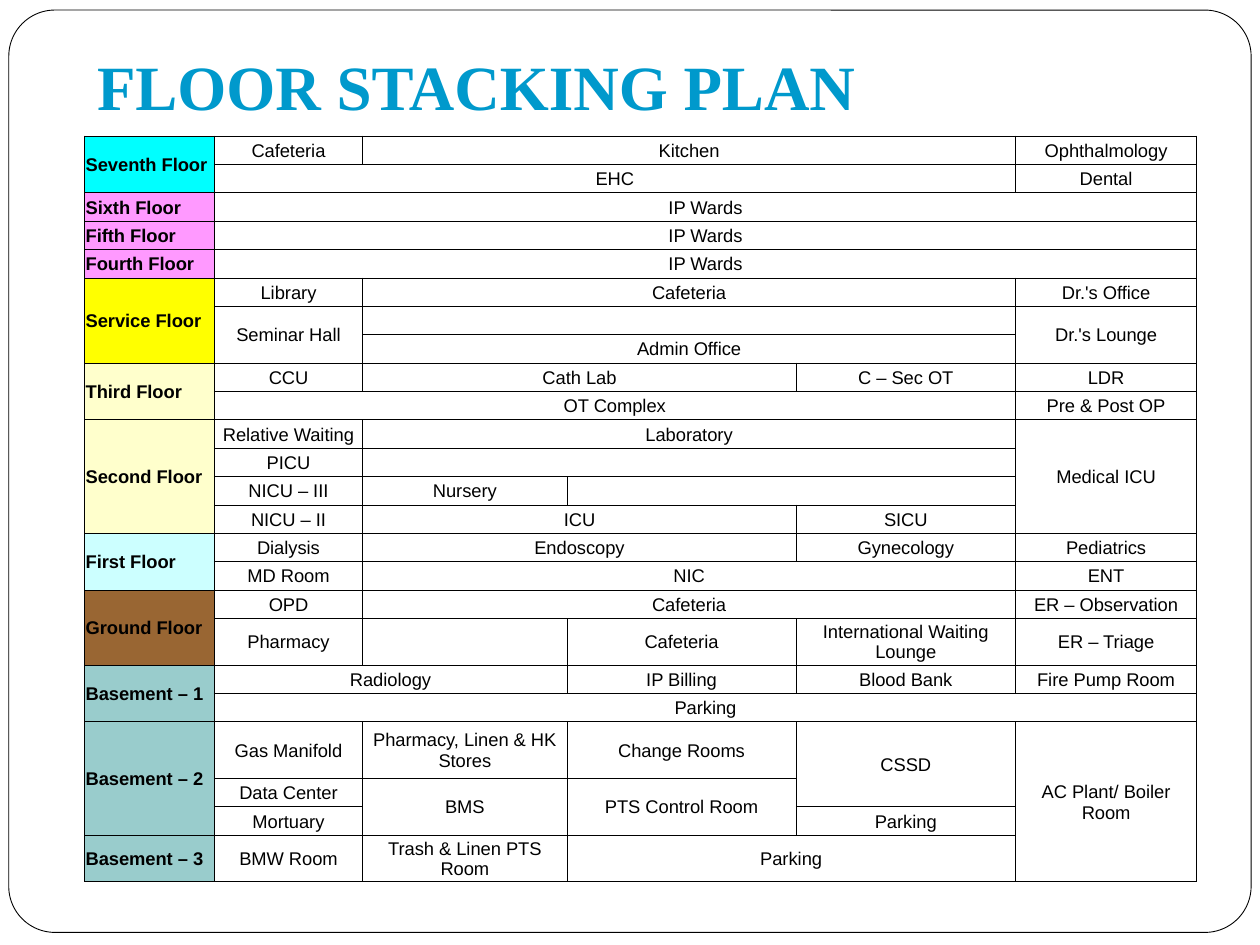
import dataclasses

import lxml.etree
import pptx
import pptx.dml.color
import pptx.enum.shapes
import pptx.enum.text
import pptx.oxml.ns
import pptx.util

Inches = pptx.util.Inches
Pt = pptx.util.Pt
RGB = pptx.dml.color.RGBColor.from_string
qn = pptx.oxml.ns.qn
Align = pptx.enum.text.PP_ALIGN
Anchor = pptx.enum.text.MSO_ANCHOR


@dataclasses.dataclass(frozen=True)
class Theme:
    paper: str = "FFFFFF"
    ink: str = "000000"
    title: str = "0099CC"
    title_font: str = "Times New Roman"
    table_font: str = "Arial"
    title_size: float = 36
    table_size: float = 10.5
    line_width: float = 0.5


theme = Theme()

floor_colors = {
    "Seventh Floor": "00FFFF",
    "Sixth Floor": "FF99FF",
    "Fifth Floor": "FF99FF",
    "Fourth Floor": "FF99FF",
    "Service Floor": "FFFF00",
    "Third Floor": "FFFFCC",
    "Second Floor": "FFFFCC",
    "First Floor": "CCFFFF",
    "Ground Floor": "996633",
    "Basement – 1": "99CCCC",
    "Basement – 2": "99CCCC",
    "Basement – 3": "99CCCC",
}

# "<" joins a cell to the one on its left, "^" to the one above.
plan = [
    ["Seventh Floor", "Cafeteria", "Kitchen", "<", "<", "Ophthalmology"],
    ["^", "EHC", "<", "<", "<", "Dental"],
    ["Sixth Floor", "IP Wards", "<", "<", "<", "<"],
    ["Fifth Floor", "IP Wards", "<", "<", "<", "<"],
    ["Fourth Floor", "IP Wards", "<", "<", "<", "<"],
    ["Service Floor", "Library", "Cafeteria", "<", "<", "Dr.'s Office"],
    ["^", "Seminar Hall", "", "<", "<", "Dr.'s Lounge"],
    ["^", "^", "Admin Office", "<", "<", "^"],
    ["Third Floor", "CCU", "Cath Lab", "<", "C – Sec OT", "LDR"],
    ["^", "OT Complex", "<", "<", "<", "Pre & Post OP"],
    ["Second Floor", "Relative Waiting", "Laboratory", "<", "<", "Medical ICU"],
    ["^", "PICU", "", "<", "<", "^"],
    ["^", "NICU – III", "Nursery", "", "<", "^"],
    ["^", "NICU – II", "ICU", "<", "SICU", "^"],
    ["First Floor", "Dialysis", "Endoscopy", "<", "Gynecology", "Pediatrics"],
    ["^", "MD Room", "NIC", "<", "<", "ENT"],
    ["Ground Floor", "OPD", "Cafeteria", "<", "<", "ER – Observation"],
    ["^", "Pharmacy", "", "Cafeteria", "International Waiting Lounge", "ER – Triage"],
    ["Basement – 1", "Radiology", "<", "IP Billing", "Blood Bank", "Fire Pump Room"],
    ["^", "Parking", "<", "<", "<", "<"],
    ["Basement – 2", "Gas Manifold", "Pharmacy, Linen & HK Stores", "Change Rooms",
     "CSSD", "AC Plant/ Boiler Room"],
    ["^", "Data Center", "BMS", "PTS Control Room", "^", "^"],
    ["^", "Mortuary", "^", "^", "Parking", "^"],
    ["Basement – 3", "BMW Room", "Trash & Linen PTS Room", "Parking", "<", "^"],
]
column_widths = [1.03, 1.18, 1.62, 1.82, 1.74, 1.44]
tall_rows = {17: 0.37, 20: 0.45, 23: 0.37}
table_height = 5.92
plain_height = (table_height - sum(tall_rows.values())) / (len(plan) - len(tall_rows))


def apply(target, **values):
    """Set each named attribute on the target."""
    for name, value in values.items():
        setattr(target, name, value)


def draw_borders(cell):
    properties = cell._tc.get_or_add_tcPr()
    for side in ("a:lnL", "a:lnR", "a:lnT", "a:lnB"):
        line = lxml.etree.SubElement(properties, qn(side), w=str(Pt(theme.line_width)))
        fill = lxml.etree.SubElement(line, qn("a:solidFill"))
        lxml.etree.SubElement(fill, qn("a:srgbClr"), val=theme.ink)


deck = pptx.Presentation()
apply(deck, slide_width=Inches(10), slide_height=Inches(7.5))
page = deck.slides.add_slide(deck.slide_layouts[5])

# Rounded frame, behind everything else
frame = page.shapes.add_shape(
    pptx.enum.shapes.MSO_SHAPE.ROUNDED_RECTANGLE,
    Inches(0.07), Inches(0.08), Inches(9.86), Inches(7.32))
frame.adjustments[0] = 0.05
frame.shadow.inherit = False
frame.fill.solid()
frame.fill.fore_color.rgb = RGB(theme.paper)
frame.line.color.rgb = RGB(theme.ink)
frame.line.width = Pt(theme.line_width)
page.shapes._spTree.insert(2, frame._element)

# Title
title = page.shapes.title
apply(title, left=Inches(0.67), top=Inches(-0.17), width=Inches(8.5), height=Inches(1.25))
apply(title.text_frame, vertical_anchor=Anchor.BOTTOM, word_wrap=True,
      auto_size=pptx.enum.text.MSO_AUTO_SIZE.NONE,
      margin_left=Inches(0.1), margin_right=Inches(0.1),
      margin_top=Inches(0.05), margin_bottom=Inches(0.1))
para = title.text_frame.paragraphs[0]
para.alignment = Align.LEFT
span = para.add_run()
span.text = "FLOOR STACKING PLAN"
apply(span.font, name=theme.title_font, size=Pt(theme.title_size), bold=True)
span.font.color.rgb = RGB(theme.title)

# Floor table
table = page.shapes.add_table(
    len(plan), len(column_widths), Inches(0.67), Inches(1.08),
    Inches(sum(column_widths)), Inches(table_height)).table
apply(table, first_row=False, horz_banding=False)
for column, width in zip(table.columns, column_widths):
    column.width = Inches(width)
for index, row in enumerate(table.rows):
    row.height = Inches(tall_rows.get(index, plain_height))

for r, labels in enumerate(plan):
    for c, label in enumerate(labels):
        cell = table.cell(r, c)
        is_floor = label in floor_colors
        apply(cell, vertical_anchor=Anchor.MIDDLE,
              margin_left=Inches(0.01), margin_right=Inches(0.01),
              margin_top=Inches(0.01), margin_bottom=0)
        draw_borders(cell)
        if is_floor:
            cell.fill.solid()
            cell.fill.fore_color.rgb = RGB(floor_colors[label])
        else:
            cell.fill.background()

        para = cell.text_frame.paragraphs[0]
        para.alignment = Align.LEFT if is_floor else Align.CENTER
        if label not in ("", "<", "^"):
            span = para.add_run()
            span.text = label
            apply(span.font, name=theme.table_font, size=Pt(theme.table_size), bold=is_floor)
            span.font.color.rgb = RGB(theme.ink)
        # Keeps empty cells from stretching their row
        lxml.etree.SubElement(para._p, qn("a:endParaRPr"), sz=str(int(theme.table_size * 100)))

        if label in ("<", "^"):
            continue
        right, bottom = c, r
        while right + 1 < len(labels) and labels[right + 1] == "<":
            right += 1
        while bottom + 1 < len(plan) and plan[bottom + 1][c] == "^":
            bottom += 1
        if (bottom, right) != (r, c):
            cell.merge(table.cell(bottom, right))

deck.save("out.pptx")
